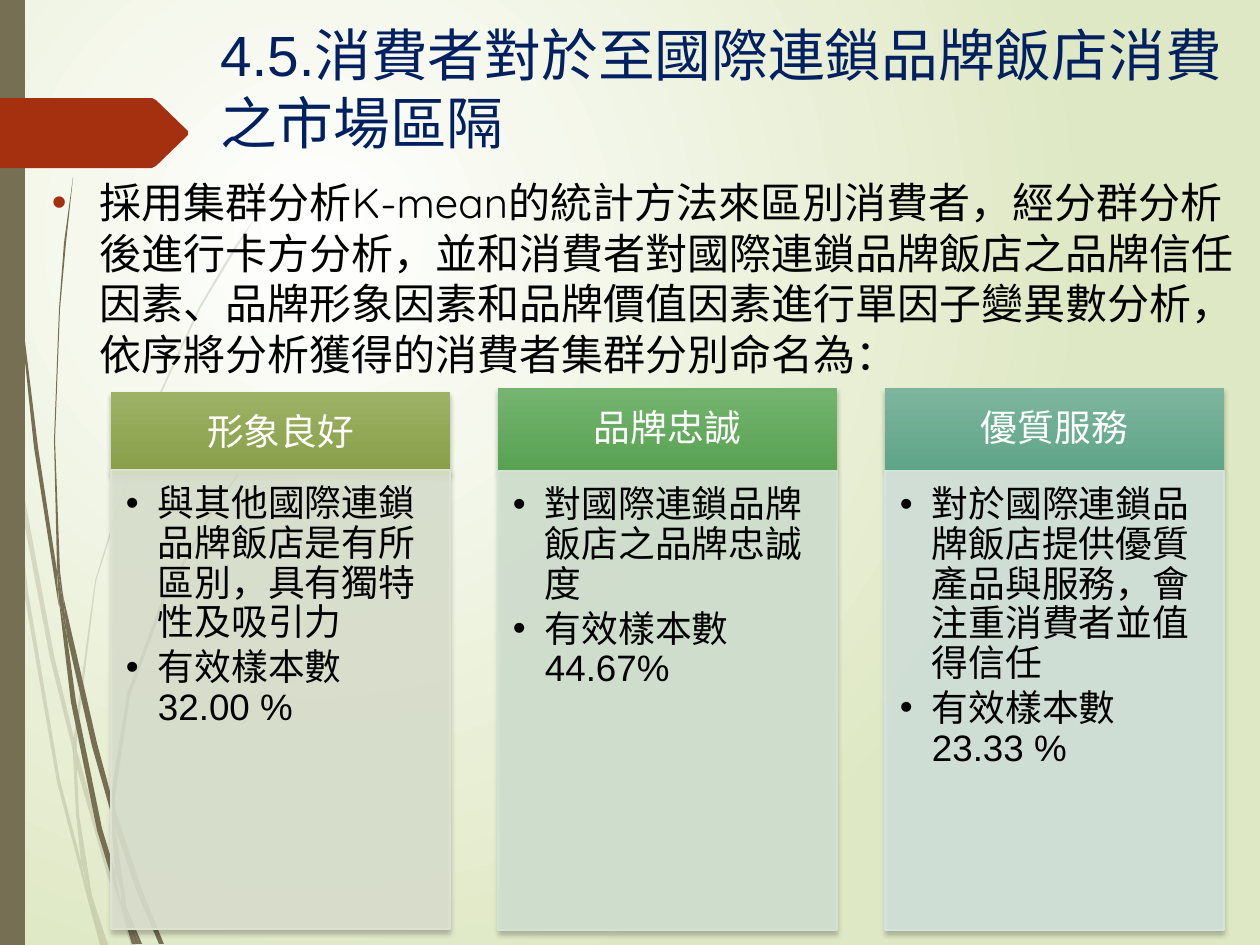
from lxml import etree
from pptx import Presentation
from pptx.dml.color import RGBColor
from pptx.enum.shapes import MSO_SHAPE
from pptx.enum.text import MSO_ANCHOR, MSO_AUTO_SIZE, PP_ALIGN
from pptx.oxml.ns import qn
from pptx.util import Pt

RECTANGLE = MSO_SHAPE.RECTANGLE
TOP, MIDDLE = MSO_ANCHOR.TOP, MSO_ANCHOR.MIDDLE
LEFT, CENTER = PP_ALIGN.LEFT, PP_ALIGN.CENTER
NO_AUTOFIT = MSO_AUTO_SIZE.NONE
EMU_PER_PX = 914400 / 126
OLIVE, RUST, NAVY = "766F54", "A53010", "002060"
BLACK, WHITE, PALE_GREEN = "000000", "FFFFFF", "DFE8C4"
INSETS = (12, 6, 12, 6)

PALE_WISPS = [
    [(10, 441), (8, 406), (0, 355), (0, 377), (9, 433)],
    [(50, 658), (74, 755), (74, 738), (54, 655), (13, 435), (15, 474)],
    [(81, 765), (77, 751), (77, 769), (107, 874), (131, 945), (136, 945), (111, 872)],
    [(105, 945), (108, 945), (92, 896)],
    [(81, 861), (60, 780), (28, 591), (15, 474), (10, 441), (24, 592), (57, 782),
     (81, 873), (88, 900), (87, 891)],
    [(73, 755), (76, 814), (81, 861), (84, 872), (92, 896), (91, 890), (79, 814),
     (77, 769), (77, 766)],
    [(77, 736), (96, 582), (140, 440), (200, 309), (236, 249), (253, 221), (273, 194),
     (273, 193), (253, 221), (234, 248), (199, 307), (139, 438), (95, 581), (74, 736),
     (74, 738), (77, 751)],
    [(88, 900), (100, 945), (103, 945)],
    [(77, 766), (77, 769), (77, 751), (74, 738), (73, 755)],
    [(84, 872), (82, 861), (87, 891), (88, 900), (103, 945), (105, 945), (92, 896)],
]
DARK_WISPS = [
    [(6, 139), (18, 294), (34, 447), (58, 601), (59, 606), (57, 576), (57, 571),
     (38, 447), (19, 292), (8, 137), (5, 60), (4, 0), (3, 0), (4, 60)],
    [(92, 746), (111, 813), (111, 798), (111, 795), (97, 743), (63, 595), (67, 636)],
    [(118, 818), (115, 808), (115, 827), (137, 892), (159, 944), (164, 944), (142, 890)],
    [(115, 871), (102, 828), (76, 701), (67, 636), (59, 601), (71, 702), (97, 830),
     (116, 892), (122, 910), (121, 903)],
    [(63, 595), (60, 571), (55, 440), (60, 309), (66, 243), (73, 178), (73, 177),
     (64, 243), (59, 309), (54, 440), (57, 566), (62, 595)],
    [(139, 944), (142, 944), (126, 906)],
    [(59, 601), (67, 636), (63, 595), (62, 595), (57, 566), (57, 571)],
    [(115, 798), (130, 696), (165, 600), (213, 512), (241, 471), (256, 452), (272, 433),
     (271, 433), (256, 451), (241, 470), (212, 510), (163, 597), (127, 694), (111, 795),
     (115, 808)],
    [(122, 910), (132, 944), (136, 944)],
    [(111, 813), (115, 871), (121, 890), (126, 906), (126, 902), (115, 827), (113, 820)],
    [(111, 813), (113, 820), (115, 827), (115, 808), (111, 795), (111, 798)],
    [(115, 871), (121, 890), (121, 903), (122, 910), (136, 944), (139, 944), (126, 906)],
]
ARROW_TAG = [(188, 135), (156, 166), (152, 168), (0, 168), (0, 98), (152, 98), (156, 100),
             (188, 131)]
SEGMENTS = [
    ("形象良好", 392, 470, ("9DB265", "889E47"), "DCE2D0",
     ["與其他國際連鎖品牌飯店是有所區別，具有獨特性及吸引力", "有效樣本數32.00 %"]),
    ("品牌忠誠", 388, 471, ("74B46F", "58A252"), "D3E2D2",
     ["對國際連鎖品牌飯店之品牌忠誠度", "有效樣本數44.67%"]),
    ("優質服務", 388, 471, ("7DB59D", "5FA588"), "D4E3DC",
     ["對於國際連鎖品牌飯店提供優質產品與服務，會注重消費者並值得信任", "有效樣本數23.33 %"]),
]
METHOD = ("採用集群分析K-mean的統計方法來區別消費者，經分群分析後進行卡方分析，"
          "並和消費者對國際連鎖品牌飯店之品牌信任因素、品牌形象因素和品牌價值因素"
          "進行單因子變異數分析，依序將分析獲得的消費者集群分別命名為：")


def px(length):
    return round(length * EMU_PER_PX)


def color(value):
    return RGBColor.from_string(value)


def add_xml(parent, tag, **attributes):
    return etree.SubElement(parent, qn(tag), attributes)


class SlideBuilder:
    """Holds the style and the slide, and draws each kind of element."""

    def __init__(self, slide, font="Arial"):
        self.slide = slide
        self.font = font

    def gradient(self, fill, colors):
        fill.gradient()
        for stop, value in zip(fill.gradient_stops, colors):
            stop.color.rgb = color(value)

    def background(self, colors):
        self.gradient(self.slide.background.fill, colors)
        gradient = self.slide.element.find(".//" + qn("a:gradFill"))
        gradient.remove(gradient.find(qn("a:lin")))
        circle = add_xml(gradient, "a:path", path="circle")
        add_xml(circle, "a:fillToRect", l="50000", t="50000", r="100000", b="100000")

    def paint(self, shape, fill, opacity=100):
        shape.fill.solid()
        shape.fill.fore_color.rgb = color(fill)
        shape.line.fill.background()
        shape.shadow.inherit = False
        if opacity < 100:
            solid = shape.element.spPr.find(qn("a:solidFill"))
            add_xml(solid[0], "a:alpha", val=str(opacity * 1000))

    def rectangle(self, box, fill, opacity=100):
        shape = self.slide.shapes.add_shape(RECTANGLE, *map(px, box))
        self.paint(shape, fill, opacity)
        return shape

    def outline(self, points, fill, opacity=100):
        builder = self.slide.shapes.build_freeform(*points[0], scale=EMU_PER_PX)
        builder.add_line_segments(points[1:], close=True)
        self.paint(builder.convert_to_shape(), fill, opacity)

    def drop_shadow(self, shape):
        effects = shape.element.spPr.find(qn("a:effectLst"))
        shadow = add_xml(effects, "a:outerShdw", blurRad=str(Pt(3)), dist=str(Pt(2)),
                         dir="5400000", algn="t", rotWithShape="0")
        add_xml(add_xml(shadow, "a:srgbClr", val=BLACK), "a:alpha", val="25000")

    def set_text(self, shape, texts, size, text_color, font=None, align=LEFT, anchor=TOP,
                 insets=INSETS, spacing=None, after=0, indent=0, bullet_color=None):
        frame = shape.text_frame
        frame.word_wrap = True
        frame.auto_size = NO_AUTOFIT
        frame.vertical_anchor = anchor
        (frame.margin_left, frame.margin_top,
         frame.margin_right, frame.margin_bottom) = map(px, insets)
        for index, text in enumerate(texts):
            paragraph = frame.add_paragraph() if index else frame.paragraphs[0]
            paragraph.alignment = align
            paragraph.line_spacing = spacing
            paragraph.space_before = Pt(0)
            paragraph.space_after = Pt(after)
            if indent:
                self.bullet(paragraph, indent, bullet_color or text_color)
            run = paragraph.add_run()
            run.text = text
            run.font.size = Pt(size)
            run.font.name = font or self.font
            run.font.color.rgb = color(text_color)

    def bullet(self, paragraph, indent, bullet_color):
        properties = paragraph._p.get_or_add_pPr()
        properties.set("marL", str(px(indent)))
        properties.set("indent", str(-px(indent)))
        add_xml(add_xml(properties, "a:buClr"), "a:srgbClr", val=bullet_color)
        add_xml(properties, "a:buFont", typeface="Arial")
        add_xml(properties, "a:buChar", char="•")

    def title(self, text, box):
        shape = self.slide.shapes.title
        shape.left, shape.top, shape.width, shape.height = map(px, box)
        self.slide.shapes.element.append(shape.element)
        self.set_text(shape, [text], 32.4, NAVY, anchor=MIDDLE)

    def body(self, text, box):
        shape = self.slide.shapes.add_textbox(*map(px, box))
        self.set_text(shape, [text], 24, BLACK, font="Quicksand", indent=48,
                      bullet_color=RUST)

    def segment(self, left, name, header_top, panel_top, header_colors, panel_color, points):
        header = self.rectangle((left, header_top, 339, 83), header_colors[0])
        self.gradient(header.fill, header_colors)
        header.fill.gradient_angle = 270
        self.drop_shadow(header)
        self.set_text(header, [name], 21, WHITE, align=CENTER, anchor=MIDDLE,
                      insets=(20, 11, 20, 11), spacing=0.9)
        panel = self.rectangle((left, panel_top, 339, 459), panel_color, 90)
        panel.line.color.rgb = color(panel_color)
        panel.line.width = Pt(0.75)
        self.drop_shadow(panel)
        self.set_text(panel, points, 21, BLACK, insets=(15, 15, 20, 23), spacing=0.9,
                      after=3, indent=32)


def main():
    presentation = Presentation()
    presentation.slide_width, presentation.slide_height = px(1260), px(945)
    builder = SlideBuilder(presentation.slides.add_slide(presentation.slide_layouts[5]))
    builder.background((WHITE, PALE_GREEN))
    for wisps, opacity in ((PALE_WISPS, 20), (DARK_WISPS, 100)):
        for points in wisps:
            builder.outline(points, OLIVE, opacity)
    builder.rectangle((0, 0, 25, 945), OLIVE)
    builder.outline(ARROW_TAG, RUST)
    builder.title("4.5.消費者對於至國際連鎖品牌飯店消費之市場區隔", (208, 18, 1038, 140))
    builder.body(METHOD, (40, 171, 1220, 228))
    for index, segment in enumerate(SEGMENTS):
        builder.segment(111 + 387 * index, *segment)
    presentation.save("out.pptx")


if __name__ == "__main__":
    main()
